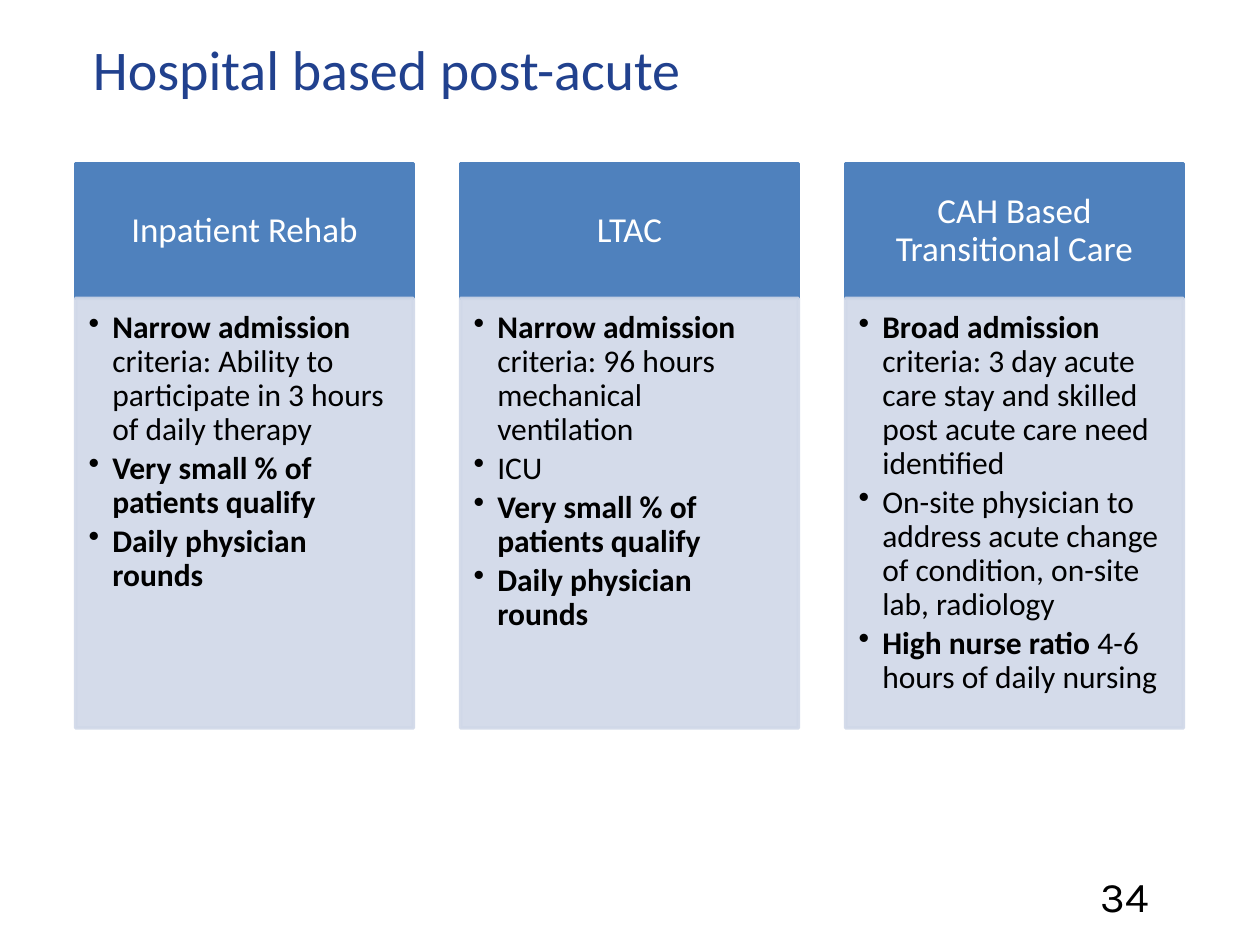
from typing import NamedTuple

import lxml.etree
import pptx
import pptx.dml.color
import pptx.enum.shapes
import pptx.enum.text
import pptx.oxml.ns
import pptx.util

Pt = pptx.util.Pt
Anchor = pptx.enum.text.MSO_ANCHOR
Align = pptx.enum.text.PP_ALIGN

BLUE = "4F81BD"
PALE = "D0D8E8"
COLUMN_LEFT, COLUMN_PITCH, COLUMN_WIDTH = 43.2, 220, 193
HEADER_TOP, HEADER_HEIGHT, BODY_HEIGHT = 93.5, 77, 245.5


class Span(NamedTuple):
    text: str
    bold: bool = False


class Column(NamedTuple):
    heading: str
    points: list[list[Span]]


SMALL_SHARE = [Span("Very small % of patients qualify", True)]
DAILY_ROUNDS = [Span("Daily physician rounds", True)]

COLUMNS = [
    Column("Inpatient Rehab", [
        [Span("Narrow admission ", True),
         Span("criteria: Ability to participate in 3 hours of daily therapy")],
        SMALL_SHARE,
        DAILY_ROUNDS,
    ]),
    Column("LTAC", [
        [Span("Narrow admission ", True),
         Span("criteria: 96 hours mechanical ventilation")],
        [Span("ICU")],
        SMALL_SHARE,
        DAILY_ROUNDS,
    ]),
    Column("CAH Based Transitional Care", [
        [Span("Broad admission ", True),
         Span("criteria: 3 day acute care stay and skilled post acute care need identified")],
        [Span("On-site physician to address acute change of condition, "
              "on-site lab, radiology")],
        [Span("High nurse ratio ", True), Span("4-6 hours of daily nursing")],
    ]),
]


def paint(color_format, color: str) -> None:
    color_format.rgb = pptx.dml.color.RGBColor.from_string(color)


def add_element(parent, tag: str, **attributes: str) -> None:
    lxml.etree.SubElement(parent, pptx.oxml.ns.qn(tag), **attributes)


def write(box, paragraphs: list[list[Span]], *, size: float, color: str,
          font: str = "Calibri", align=Align.LEFT, anchor=Anchor.TOP,
          insets: tuple = (7.2, 3.6, 7.2, 3.6), line_spacing: float = 1.0,
          space_after: float = 0, bullet_indent: float = 0) -> None:
    frame = box.text_frame
    frame.word_wrap = True
    frame.vertical_anchor = anchor
    (frame.margin_left, frame.margin_top,
     frame.margin_right, frame.margin_bottom) = map(Pt, insets)
    for index, spans in enumerate(paragraphs):
        para = frame.add_paragraph() if index else frame.paragraphs[0]
        if bullet_indent:
            para.level = 1
            properties = para._p.get_or_add_pPr()
            properties.set("marL", str(Pt(bullet_indent)))
            properties.set("indent", str(-Pt(bullet_indent)))
            add_element(properties, "a:buChar", char="•")
        para.alignment = align
        para.line_spacing = line_spacing
        para.space_after = Pt(space_after)
        for span in spans:
            run = para.add_run()
            run.text = span.text
            run.font.name = font
            run.font.size = Pt(size)
            run.font.bold = span.bold
            paint(run.font.color, color)


def add_panel(page, left: float, top: float, height: float, color: str,
              opacity: int = 100):
    panel = page.shapes.add_shape(
        pptx.enum.shapes.MSO_SHAPE.RECTANGLE,
        Pt(left), Pt(top), Pt(COLUMN_WIDTH), Pt(height))
    panel.shadow.inherit = False
    panel.fill.solid()
    paint(panel.fill.fore_color, color)
    panel.line.width = Pt(2)
    paint(panel.line.color, color)
    if opacity < 100:
        for swatch in panel._element.spPr.iter(pptx.oxml.ns.qn("a:srgbClr")):
            add_element(swatch, "a:alpha", val=str(opacity * 1000))
    return panel


def add_column(page, left: float, column: Column) -> None:
    header = add_panel(page, left, HEADER_TOP, HEADER_HEIGHT, BLUE)
    write(header, [[Span(column.heading)]], size=20, color="FFFFFF",
          align=Align.CENTER, anchor=Anchor.MIDDLE,
          insets=(11.2, 6.4, 11.2, 6.4), line_spacing=0.9)
    body = add_panel(page, left, HEADER_TOP + HEADER_HEIGHT, BODY_HEIGHT, PALE, 90)
    write(body, column.points, size=18, color="000000",
          insets=(7.5, 7.5, 10, 11.2), line_spacing=0.9,
          space_after=2.7, bullet_indent=13.5)


def add_label(page, left: float, top: float, width: float, height: float,
              text: str, **text_format) -> None:
    box = page.shapes.add_textbox(Pt(left), Pt(top), Pt(width), Pt(height))
    write(box, [[Span(text)]], **text_format)


def main() -> None:
    """Build the slide comparing hospital based post-acute settings."""
    deck = pptx.Presentation()
    deck.slide_width, deck.slide_height = Pt(720), Pt(540)
    page = deck.slides.add_slide(deck.slide_layouts[6])
    add_label(page, 46, 16, 633.6, 105, "Hospital based post-acute",
              size=32, color="21418E")
    for index, column in enumerate(COLUMNS):
        add_column(page, COLUMN_LEFT + index * COLUMN_PITCH, column)
    add_label(page, 622, 494, 78, 29, "34", size=24, color="000000", font="Karla")
    deck.save("out.pptx")


if __name__ == "__main__":
    main()
